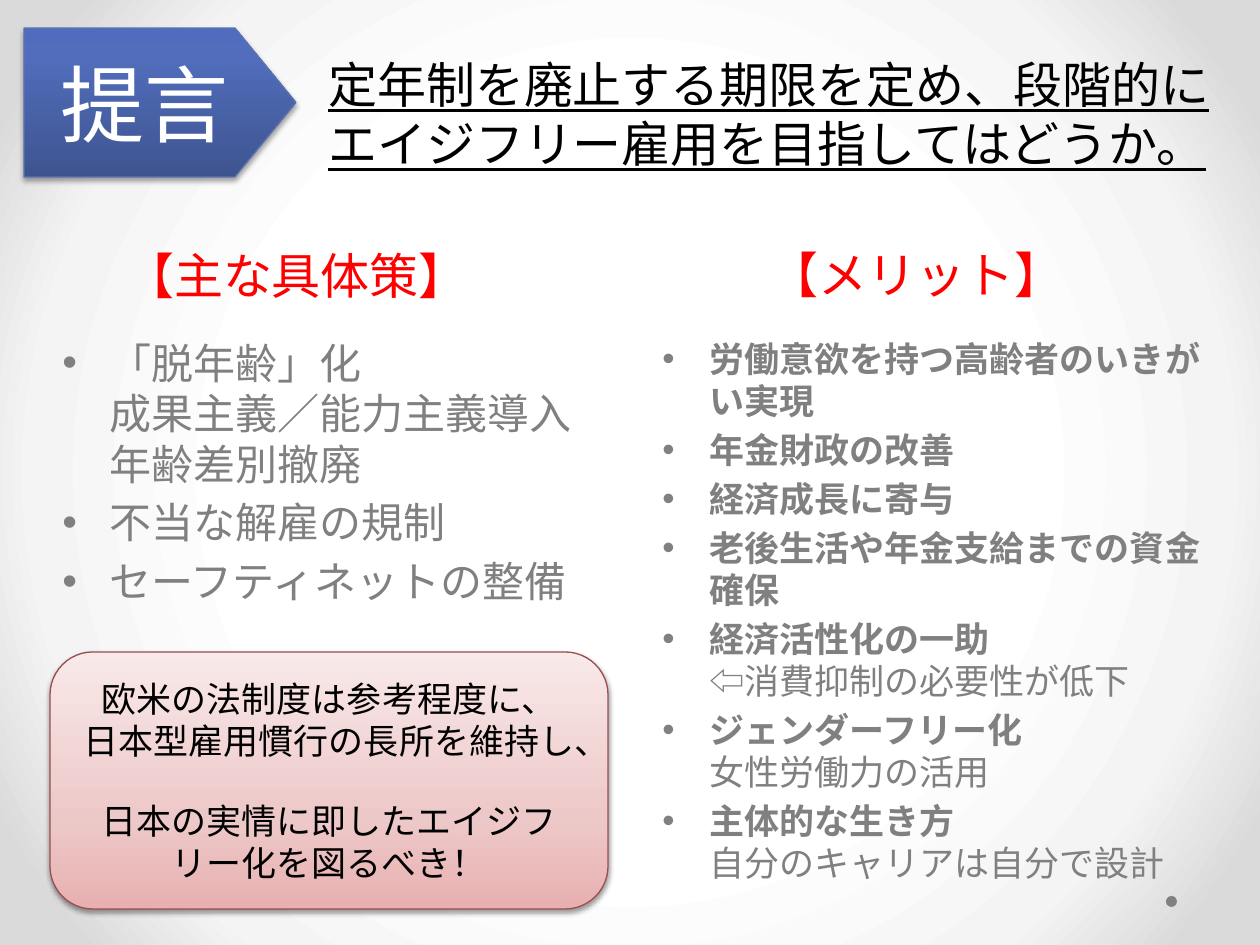
import pptx
import pptx.util
import pptx.dml.color
import pptx.enum.shapes
import pptx.enum.text
import pptx.oxml.ns
from lxml import etree

# Content: each paragraph is a list of (text, bold) runs
PROPOSAL = "提言"
TITLE = "定年制を廃止する期限を定め、段階的にエイジフリー雇用を目指してはどうか。"
MEASURES = [
    [("「脱年齢」化\n成果主義／能力主義導入\n年齢差別撤廃", False)],
    [("不当な解雇の規制", False)],
    [("セーフティネットの整備", False)],
]
MERITS = [
    [("労働意欲を持つ高齢者のいきがい実現", True)],
    [("年金財政の改善", True)],
    [("経済成長に寄与", True)],
    [("老後生活や年金支給までの資金確保", True)],
    [("経済活性化の一助\n", True), ("⇦消費抑制の必要性が低下", False)],
    [("ジェンダーフリー化\n", True), ("女性労働力の活用", False)],
    [("主体的な生き方\n", True), ("自分のキャリアは自分で設計", False)],
]
CONCLUSION = ("欧米の法制度は参考程度に、\n日本型雇用慣行の長所を維持し、\n"
              "日本の実情に即したエイジフリー化を図るべき！")

# Headings and lists: (text, box in px)
HEADINGS = [("【メリット】", (745, 238, 343, 72)), ("【主な具体策】", (107, 239, 379, 72))]
LISTS = [(MEASURES, (50, 331, 541, 281), "measure"), (MERITS, (650, 331, 577, 587), "merit")]

THEME = {
    "body": "League Spartan", "display": "Vollkorn",
    "black": "000000", "white": "FFFFFF", "red": "FF0000", "grey": "808080",
    "size": {"banner": 48, "title": 28, "heading": 28, "measure": 24, "merit": 20, "box": 20},
    "page": [(50, "FFFFFF"), (76, "F4F4F4"), (92, "DADADA")],
    "blue": [(0, "3E5490"), (80, "516DBB"), (100, "4F6CBE")], "blue_line": "5C72B2",
    "pink": [(0, "E8B0B0"), (35, "EDC8C8"), (100, "F9E9E9")], "pink_line": "9A4E4E",
}
SIZE = THEME["size"]
SHAPE = pptx.enum.shapes.MSO_SHAPE
CENTER = pptx.enum.text.PP_ALIGN.CENTER
PX = 914400 / 126
INDENT = 47


def px(*lengths):
    return [round(n * PX) for n in lengths]


def rgb(value):
    return pptx.dml.color.RGBColor.from_string(value)


def child(parent, tag, **attrs):
    el = etree.SubElement(parent, pptx.oxml.ns.qn(tag))
    for name, value in attrs.items():
        el.set(name, str(value))
    return el


def gradient(fill, root, stops, angle=None):
    """Fill with the given stops, along an angle or outwards from the centre."""
    fill.gradient()
    grad = root.find(".//" + pptx.oxml.ns.qn("a:gradFill"))
    for old in list(grad):
        grad.remove(old)
    gs_list = child(grad, "a:gsLst")
    for pos, color in stops:
        child(child(gs_list, "a:gs", pos=pos * 1000), "a:srgbClr", val=color)
    if angle is None:
        child(child(grad, "a:path", path="circle"), "a:fillToRect",
              l=50000, t=50000, r=50000, b=50000)
    else:
        child(grad, "a:lin", ang=angle * 60000, scaled=0)


def write(p, text, font, size, color, bold=False, underline=False):
    for i, line in enumerate(text.split("\n")):
        if i:
            p.add_line_break()
        if line:
            r = p.add_run()
            r.text = line
            r.font.name, r.font.size = font, pptx.util.Pt(size)
            r.font.bold, r.font.underline = bold, underline
            r.font.color.rgb = rgb(color)


def text_box(s, box):
    tf = s.shapes.add_textbox(*px(*box)).text_frame
    tf.word_wrap = True
    return tf


def bullet_list(s, items, box, size):
    tf = text_box(s, box)
    for i, runs in enumerate(items):
        p = tf.add_paragraph() if i else tf.paragraphs[0]
        p.space_before = pptx.util.Pt(size * 0.2)
        pPr = p._p.get_or_add_pPr()
        pPr.set("marL", str(px(INDENT)[0]))
        pPr.set("indent", str(-px(INDENT)[0]))
        child(pPr, "a:buFont", typeface="Arial")
        child(pPr, "a:buChar", char="•")
        for text, bold in runs:
            write(p, text, THEME["body"], size, THEME["grey"], bold)


def panel(s, kind, box, stops, line, shadow, text, size, color):
    """Gradient shape with a soft shadow below and centred text."""
    sp = s.shapes.add_shape(kind, *px(*box))
    gradient(sp.fill, sp._element, stops, 270)
    sp.line.color.rgb = rgb(line)
    sp.line.width = pptx.util.Pt(0.75)
    sp.shadow.inherit = False
    alpha, distance = shadow
    effects = sp._element.spPr.find(pptx.oxml.ns.qn("a:effectLst"))
    outer = child(effects, "a:outerShdw", blurRad=pptx.util.Pt(3.1),
                  dist=pptx.util.Pt(distance), dir=90 * 60000, rotWithShape=0)
    child(child(outer, "a:srgbClr", val=THEME["black"]), "a:alpha", val=alpha * 1000)
    tf = sp.text_frame
    tf.word_wrap = True
    tf.vertical_anchor = pptx.enum.text.MSO_ANCHOR.MIDDLE
    p = tf.paragraphs[0]
    p.alignment = CENTER
    write(p, text, THEME["display"], size, color)
    return sp


def main():
    prs = pptx.Presentation()
    prs.slide_width, prs.slide_height = px(1260, 945)
    s = prs.slides.add_slide(prs.slide_layouts[6])

    # Background and corner dot
    gradient(s.background.fill, s._element, THEME["page"])
    dot = s.shapes.add_shape(SHAPE.OVAL, *px(1166, 896, 11, 11))
    dot.shadow.inherit = False
    dot.fill.solid()
    dot.fill.fore_color.rgb = rgb(THEME["grey"])
    dot.line.fill.background()

    # Title
    p = text_box(s, (316, 48, 910, 142)).paragraphs[0]
    write(p, TITLE, THEME["body"], SIZE["title"], THEME["black"], underline=True)

    # Bullet lists
    for items, box, level in LISTS:
        bullet_list(s, items, box, SIZE[level])

    # Proposal banner
    banner = panel(s, SHAPE.PENTAGON, (24, 28, 272, 149), THEME["blue"], THEME["blue_line"],
                   (35, 1.8), PROPOSAL, SIZE["banner"], THEME["white"])
    banner.adjustments[0] = 0.41

    # Headings
    for text, box in HEADINGS:
        tf = text_box(s, box)
        tf.auto_size = pptx.enum.text.MSO_AUTO_SIZE.SHAPE_TO_FIT_TEXT
        tf.paragraphs[0].alignment = CENTER
        write(tf.paragraphs[0], text, THEME["display"], SIZE["heading"], THEME["red"])

    # Conclusion
    panel(s, SHAPE.ROUNDED_RECTANGLE, (50, 652, 558, 257), THEME["pink"], THEME["pink_line"],
          (38, 1.6), CONCLUSION, SIZE["box"], THEME["black"])

    prs.save("out.pptx")


if __name__ == "__main__":
    main()
